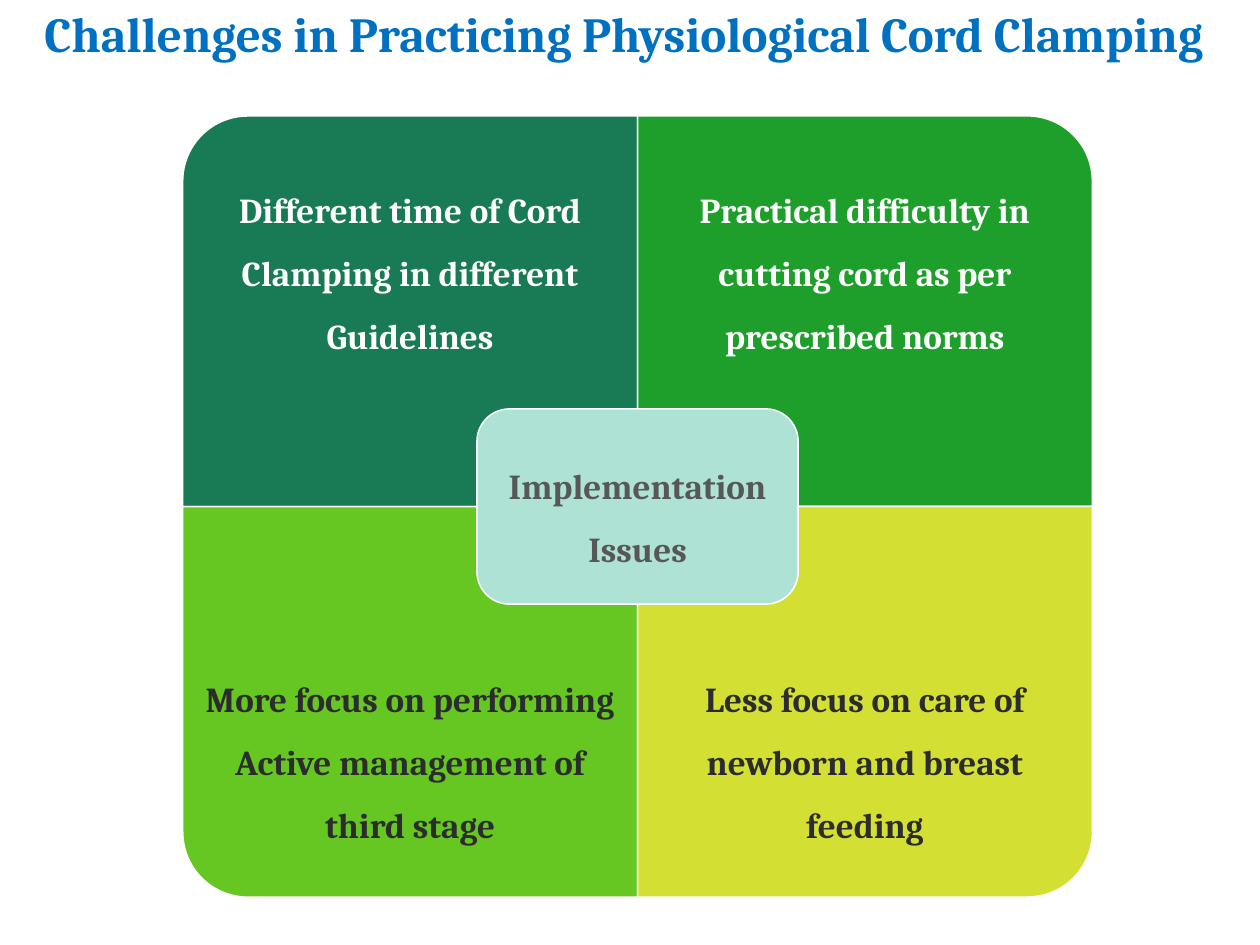
from dataclasses import dataclass

from pptx import Presentation
from pptx.dml.color import RGBColor as Rgb
from pptx.enum.shapes import MSO_SHAPE as Kind
from pptx.enum.text import MSO_ANCHOR as Anchor, PP_ALIGN as Align
from pptx.util import Inches, Pt

FONT = "Cambria"
COLORS = {
    "title": "0070C0",
    "teal": "197A56",
    "green": "1E9F2C",
    "lime": "66C622",
    "yellow": "D4DF33",
    "mint": "AEE2D5",
    "white": "FFFFFF",
    "dark": "2C2C2C",
    "gray": "575757",
}
LEFT, TOP = 1.45, 0.92
WIDE, HIGH = 3.61, 3.1
TEXT_HIGH = 2.32
HUB_WIDE, HUB_HIGH, HUB_PAD = 2.55, 1.55, 0.08


@dataclass
class Box:
    left: float
    top: float
    wide: float
    high: float


@dataclass
class Quad:
    text: str
    fill: str
    ink: str
    col: int
    row: int
    turn: int


QUADS = [
    Quad("Different time of Cord Clamping in different Guidelines",
         "teal", "white", 0, 0, 270),
    Quad("Practical difficulty in cutting cord as per prescribed norms",
         "green", "white", 1, 0, 0),
    Quad("More focus on performing Active management of third stage",
         "lime", "dark", 0, 1, 180),
    Quad("Less focus on care of newborn and breast feeding",
         "yellow", "dark", 1, 1, 90),
]


def color(name: str) -> Rgb:
    return Rgb.from_string(COLORS[name])


def place(box: Box) -> tuple:
    return tuple(Inches(n) for n in (box.left, box.top, box.wide, box.high))


def add_panel(slide, kind, box: Box, fill: str, turn: int = 0) -> None:
    if turn % 180:
        shift = (box.wide - box.high) / 2
        box = Box(box.left + shift, box.top - shift, box.high, box.wide)
    panel = slide.shapes.add_shape(kind, *place(box))
    panel.rotation = turn
    panel.shadow.inherit = False
    panel.fill.solid()
    panel.fill.fore_color.rgb = color(fill)
    panel.line.color.rgb = color("white")
    panel.line.width = Pt(0.85)


def add_text(slide, box: Box, text: str, ink: str, size: int = 20,
             pad: float = 0.16, space: float = 1.5,
             anchor=Anchor.MIDDLE) -> None:
    frame = slide.shapes.add_textbox(*place(box)).text_frame
    frame.word_wrap = True
    frame.vertical_anchor = anchor
    frame.margin_left = frame.margin_right = Inches(pad)
    frame.margin_top = frame.margin_bottom = Inches(pad)
    frame.text = text
    para = frame.paragraphs[0]
    para.alignment = Align.CENTER
    para.line_spacing = space
    font = para.runs[0].font
    font.name = FONT
    font.size = Pt(size)
    font.bold = True
    font.color.rgb = color(ink)


def add_quad(slide, quad: Quad) -> None:
    left = LEFT + quad.col * WIDE
    top = TOP + quad.row * HIGH
    add_panel(slide, Kind.ROUND_1_RECTANGLE, Box(left, top, WIDE, HIGH),
              quad.fill, quad.turn)
    drop = quad.row * (HIGH - TEXT_HIGH)
    add_text(slide, Box(left, top + drop, WIDE, TEXT_HIGH),
             quad.text, quad.ink)


def add_hub(slide) -> None:
    hub = Box(LEFT + WIDE - HUB_WIDE / 2, TOP + HIGH - HUB_HIGH / 2,
              HUB_WIDE, HUB_HIGH)
    add_panel(slide, Kind.ROUNDED_RECTANGLE, hub, "mint")
    inner = Box(hub.left + HUB_PAD, hub.top + HUB_PAD,
                hub.wide - 2 * HUB_PAD, hub.high - 2 * HUB_PAD)
    add_text(slide, inner, "Implementation Issues", "gray", pad=HUB_PAD)


def main() -> None:
    deck = Presentation()
    deck.slide_width = Inches(10)
    deck.slide_height = Inches(7.5)
    slide = deck.slides.add_slide(deck.slide_layouts[6])
    add_text(slide, Box(0, 0.08, 9.9, 0.42),
             "Challenges in Practicing Physiological Cord Clamping",
             "title", size=28, pad=0, space=0.9, anchor=Anchor.TOP)
    for quad in QUADS:
        add_quad(slide, quad)
    add_hub(slide)
    deck.save("out.pptx")


if __name__ == "__main__":
    main()
